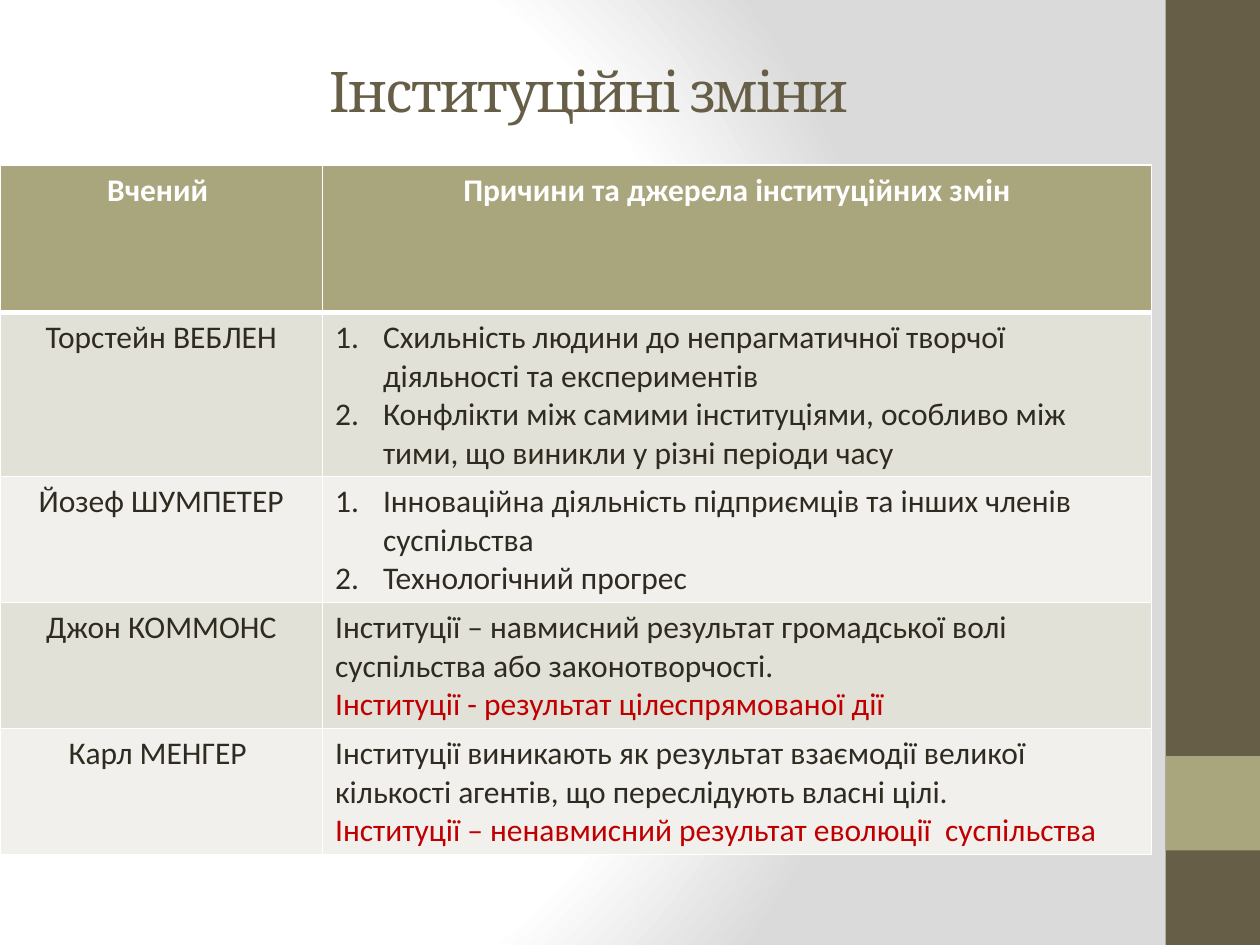
"""Build the slide on sources of institutional change."""
import lxml.etree
import pptx
import pptx.dml.color
import pptx.enum.shapes
import pptx.enum.text
import pptx.oxml
import pptx.oxml.ns
import pptx.util

THEME = {
    "title_font": "Cambria", "body_font": "Calibri",
    "title_size": 32, "body_size": 18,
    "brown": "675E47", "olive": "A9A57C", "ink": "2F2B20",
    "white": "FFFFFF", "red": "C00000", "grey": "DADADA",
    "bands": ("E2E1D7", "F1F0EC"),
}
TITLE = "Інституційні зміни"
HEADINGS = ("Вчений ", "Причини та джерела інституційних змін")
SCHOLARS = [
    ("Торстейн ВЕБЛЕН", [
        ("numbered", "Схильність людини до непрагматичної творчої діяльності та експериментів"),
        ("numbered", "Конфлікти між самими інституціями, особливо між тими, що виникли у різні періоди часу"),
    ]),
    ("Йозеф ШУМПЕТЕР", [
        ("numbered", "Інноваційна діяльність підприємців та інших членів суспільства"),
        ("numbered", "Технологічний прогрес"),
    ]),
    ("Джон КОММОНС", [
        ("plain", "Інституції – навмисний результат громадської волі суспільства або законотворчості."),
        ("conclusion", "Інституції - результат цілеспрямованої дії"),
    ]),
    ("Карл МЕНГЕР ", [
        ("plain", "Інституції виникають як результат взаємодії великої кількості агентів, що переслідують власні цілі."),
        ("conclusion", "Інституції – ненавмисний результат еволюції  суспільства"),
    ]),
]
WIDTH, HEIGHT = 10, 7.5
SIDEBAR = 0.075 * WIDTH
COLUMNS = (2.56, 6.58)
HEADING_HEIGHT, SCHOLAR_HEIGHT = 1.17, 0.87
INDENT = 0.38
CENTER = pptx.enum.text.PP_ALIGN.CENTER
inch = pptx.util.Inches


def color(name):
    return pptx.dml.color.RGBColor.from_string(name)


def child(parent, tag, **attributes):
    return lxml.etree.SubElement(parent, pptx.oxml.ns.qn(tag), attributes)


def paint_background(slide):
    stops = "".join(
        f'<a:gs pos="{share * 1000}"><a:srgbClr val="{THEME[name]}"/></a:gs>'
        for share, name in ((0, "white"), (75, "white"), (100, "grey")))
    gradient = pptx.oxml.parse_xml(
        f'<p:bg {pptx.oxml.ns.nsdecls("p", "a")}><p:bgPr><a:gradFill rotWithShape="1">'
        f'<a:gsLst>{stops}</a:gsLst><a:path path="circle">'
        '<a:fillToRect l="20000" t="50000" r="100000" b="50000"/></a:path>'
        '</a:gradFill><a:effectLst/></p:bgPr></p:bg>')
    slide.element.cSld.insert(0, gradient)


def add_block(slide, top, height, fill):
    block = slide.shapes.add_shape(
        pptx.enum.shapes.MSO_SHAPE.RECTANGLE,
        inch(WIDTH - SIDEBAR), inch(top), inch(SIDEBAR), inch(height))
    block.shadow.inherit = False
    block.fill.solid()
    block.fill.fore_color.rgb = color(fill)
    block.line.fill.background()


def write(paragraph, text, ink, font="body", bold=False, align=None):
    paragraph.alignment = align
    run = paragraph.add_run()
    run.text = text
    run.font.name = THEME[font + "_font"]
    run.font.size = pptx.util.Pt(THEME[font + "_size"])
    run.font.bold = bold
    run.font.color.rgb = color(THEME[ink])
    return run


def number(paragraph):
    properties = paragraph._p.get_or_add_pPr()
    properties.set("marL", str(inch(INDENT)))
    properties.set("indent", str(-inch(INDENT)))
    child(properties, "a:buFont", typeface="+mj-lt")
    child(properties, "a:buAutoNum", type="arabicPeriod")


def dress(cell, fill, top=1, bottom=1):
    properties = cell._tc.get_or_add_tcPr()
    for side, points in (("L", 1), ("R", 1), ("T", top), ("B", bottom)):
        border = child(properties, "a:ln" + side, w=str(pptx.util.Pt(points)))
        child(child(border, "a:solidFill"), "a:srgbClr", val=THEME["white"])
    cell.fill.solid()
    cell.fill.fore_color.rgb = color(fill)


def add_title(slide):
    title = slide.shapes.add_textbox(inch(0.51), inch(0.21), inch(8.33), inch(1.01))
    title.text_frame.word_wrap = True
    title.text_frame.vertical_anchor = pptx.enum.text.MSO_ANCHOR.MIDDLE
    heading = write(title.text_frame.paragraphs[0], TITLE, "brown", "title", align=CENTER)
    heading.font._element.set("spc", "-100")


def add_scholars(slide):
    table = slide.shapes.add_table(
        len(SCHOLARS) + 1, len(COLUMNS),
        inch(0), inch(1.31), inch(sum(COLUMNS)), inch(5.47)).table
    for column, width in zip(table.columns, COLUMNS):
        column.width = inch(width)
    for index, row in enumerate(table.rows):
        row.height = inch(SCHOLAR_HEIGHT if index else HEADING_HEIGHT)
    for cell, heading in zip(table.rows[0].cells, HEADINGS):
        dress(cell, THEME["olive"], bottom=3)
        write(cell.text_frame.paragraphs[0], heading, "white", bold=True, align=CENTER)
    for index, (scholar, causes) in enumerate(SCHOLARS):
        name_cell, cause_cell = table.rows[index + 1].cells
        for cell in (name_cell, cause_cell):
            dress(cell, THEME["bands"][index % 2], top=1 if index else 3)
        write(name_cell.text_frame.paragraphs[0], scholar, "ink", align=CENTER)
        for position, (kind, cause) in enumerate(causes):
            frame = cause_cell.text_frame
            paragraph = frame.add_paragraph() if position else frame.paragraphs[0]
            write(paragraph, cause, "red" if kind == "conclusion" else "ink")
            if kind == "numbered":
                number(paragraph)


def main():
    deck = pptx.Presentation()
    deck.slide_width, deck.slide_height = inch(WIDTH), inch(HEIGHT)
    slide = deck.slides.add_slide(deck.slide_layouts[6])
    paint_background(slide)
    add_block(slide, 0, HEIGHT, THEME["brown"])
    add_block(slide, 0.8 * HEIGHT, SIDEBAR, THEME["olive"])
    add_title(slide)
    add_scholars(slide)
    deck.save("out.pptx")


if __name__ == "__main__":
    main()
